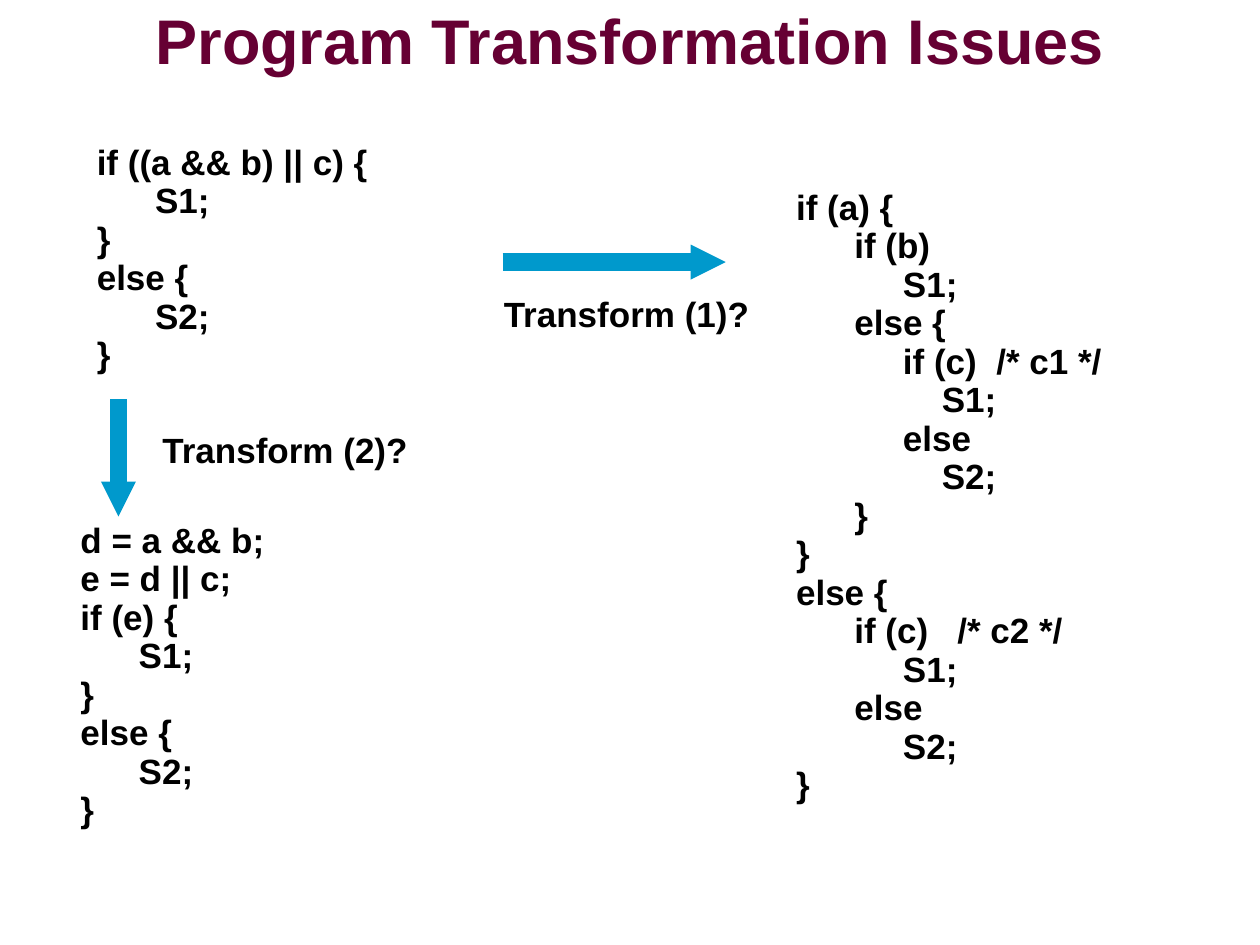
from dataclasses import dataclass

from lxml.etree import SubElement
from pptx import Presentation
from pptx.dml.color import RGBColor
from pptx.enum.shapes import MSO_CONNECTOR
from pptx.enum.text import MSO_ANCHOR, PP_ALIGN
from pptx.oxml.ns import qn
from pptx.util import Inches, Pt


@dataclass(frozen=True)
class Theme:
    font: str = "Arial"
    title: RGBColor = RGBColor(0x66, 0x00, 0x33)
    text: RGBColor = RGBColor(0x00, 0x00, 0x00)
    arrow: RGBColor = RGBColor(0x00, 0x99, 0xCC)
    title_size: int = 36
    code_size: int = 20
    line_pitch: int = 22
    arrow_width: int = 10


THEME = Theme()
WIDTH, HEIGHT = 10, 7.5
INSET, LEAD = 0.05, 0.41  # inches above the first line: tight or lowered

# Content
TITLE = "Program Transformation Issues"

SOURCE_CODE = """\
if ((a && b) || c) {
      S1;
}
else {
      S2;
}"""

NESTED_CODE = """\
if (a) {
      if (b)
           S1;
      else {
           if (c)  /* c1 */
               S1;
           else
               S2;
      }
}
else {
      if (c)   /* c2 */
           S1;
      else
           S2;
}"""

FLAT_CODE = """\
d = a && b;
e = d || c;
if (e) {
      S1;
}
else {
      S2;
}"""

# text, left, top, width, space above the first line
BLOCKS = [
    (SOURCE_CODE, 0.67, 0.73, 3.03, LEAD),
    (NESTED_CODE, 6.22, 1.09, 3.03, LEAD),
    ("Transform (1)?", 3.9, 1.94, 2.16, LEAD),
    ("Transform (2)?", 1.19, 3.38, 2.27, INSET),
    (FLAT_CODE, 0.54, 4.09, 3.03, INSET),
]

# start, end
ARROWS = [
    ((3.99, 2.08), (5.76, 2.08)),
    ((0.94, 3.17), (0.94, 4.1)),
]


def style(paragraph, size, color):
    font = paragraph.font
    font.name, font.size, font.bold = THEME.font, Pt(size), True
    font.color.rgb = color


def add_title(slide):
    title = slide.shapes.title
    title.left, title.top = Inches(0.75), Inches(0.08)
    title.width, title.height = Inches(WIDTH - 2 * 0.75), Inches(0.46)
    frame = title.text_frame
    frame.text = TITLE
    frame.vertical_anchor = MSO_ANCHOR.MIDDLE
    paragraph = frame.paragraphs[0]
    paragraph.alignment = PP_ALIGN.CENTER
    style(paragraph, THEME.title_size, THEME.title)


def add_block(slide, text, left, top, width, lead):
    lines = text.split("\n")
    height = lead + len(lines) * THEME.line_pitch / 72 + INSET
    box = slide.shapes.add_textbox(*map(Inches, (left, top, width, height)))
    frame = box.text_frame
    frame.word_wrap = True
    frame.margin_top, frame.margin_right = Inches(lead), 0
    frame.text = text
    for paragraph in frame.paragraphs:
        paragraph.line_spacing = Pt(THEME.line_pitch)
        style(paragraph, THEME.code_size, THEME.text)


def add_arrow(slide, start, end):
    arrow = slide.shapes.add_connector(
        MSO_CONNECTOR.STRAIGHT, *map(Inches, start + end))
    arrow.line.color.rgb = THEME.arrow
    arrow.line.width = Pt(THEME.arrow_width)
    properties = arrow.element.spPr
    SubElement(properties.find(qn("a:ln")), qn("a:tailEnd"), type="triangle",
               w="sm", len="sm")
    SubElement(properties, qn("a:effectLst"))


def main():
    deck = Presentation()
    deck.slide_width, deck.slide_height = Inches(WIDTH), Inches(HEIGHT)
    slide = deck.slides.add_slide(deck.slide_layouts.get_by_name("Title Only"))
    add_title(slide)
    for block in BLOCKS:
        add_block(slide, *block)
    for start, end in ARROWS:
        add_arrow(slide, start, end)
    deck.save("out.pptx")


if __name__ == "__main__":
    main()
